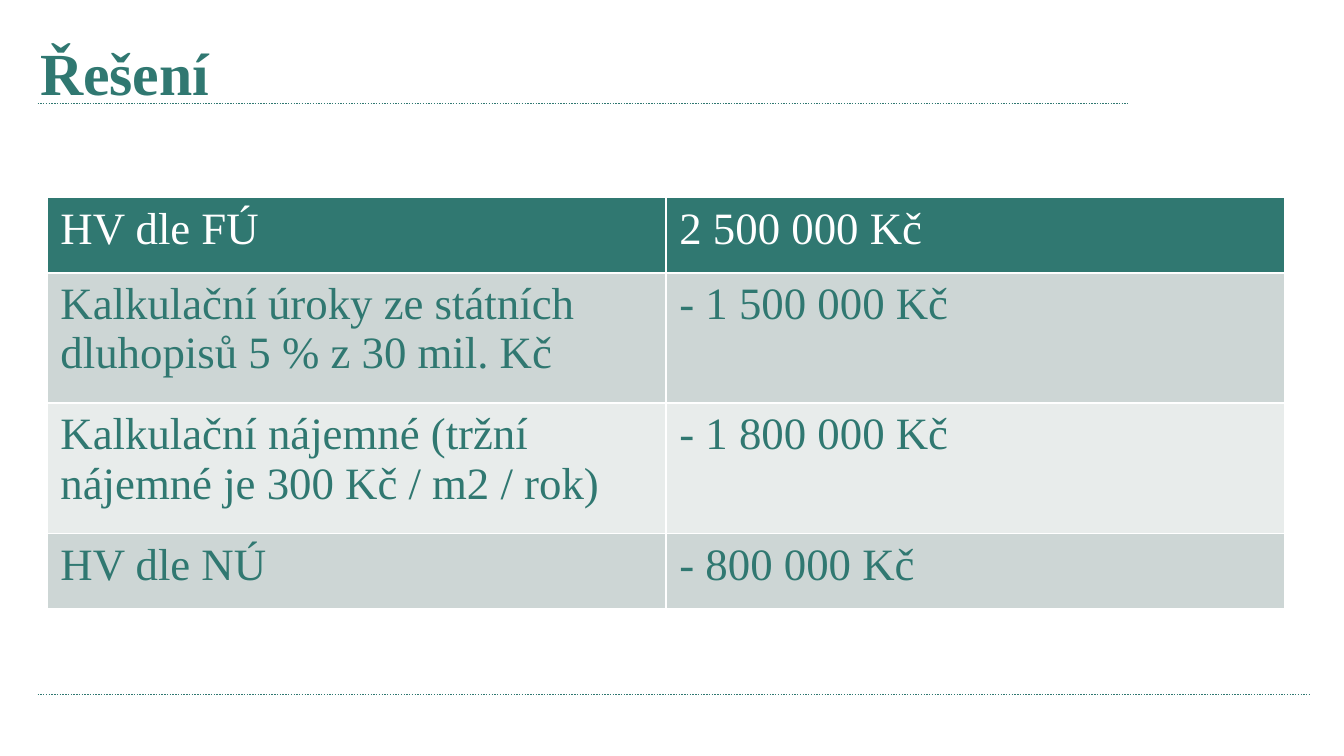
from lxml import etree
from pptx import Presentation
from pptx.dml.color import RGBColor
from pptx.enum.dml import MSO_LINE
from pptx.enum.shapes import MSO_CONNECTOR
from pptx.enum.text import MSO_ANCHOR
from pptx.oxml.ns import qn
from pptx.util import Inches, Pt

STRAIGHT, DOTTED, TOP = MSO_CONNECTOR.STRAIGHT, MSO_LINE.ROUND_DOT, MSO_ANCHOR.TOP
TEAL, WHITE, BAND_DARK, BAND_LIGHT = "307871", "FFFFFF", "CDD6D5", "E8ECEB"
FONT = "Times New Roman"

# Content
TITLE = "Řešení"
ROWS = [
    ("HV dle FÚ", "2 500 000 Kč"),
    ("Kalkulační úroky ze státních dluhopisů 5 % z 30 mil. Kč", "- 1 500 000 Kč"),
    ("Kalkulační nájemné (tržní nájemné je 300 Kč / m2 / rok)", "- 1 800 000 Kč"),
    ("HV dle NÚ", "- 800 000 Kč"),
]
ROW_HEIGHTS = [0.56, 0.97, 0.97, 0.56]
TABLE_WIDTH = 9.21
RULES = [(0.77, 8.39), (5.17, 9.75)]  # y, right end


def rgb(value):
    return RGBColor.from_string(value)


def write(tf, text, size, color, bold=False):
    r = tf.paragraphs[0].add_run()
    r.text = text
    for name, value in {"name": FONT, "size": Pt(size), "bold": bold}.items():
        setattr(r.font, name, value)
    r.font.color.rgb = rgb(color)


def add_borders(cell, color, width):
    tc_pr = cell._tc.get_or_add_tcPr()
    for i, side in enumerate(("lnL", "lnR", "lnT", "lnB")):
        ln = etree.Element(qn(f"a:{side}"), w=str(Pt(width)))
        fill = etree.SubElement(ln, qn("a:solidFill"))
        etree.SubElement(fill, qn("a:srgbClr"), val=color)
        tc_pr.insert(i, ln)  # borders come before the cell fill


# Slide in 16:9
prs = Presentation()
prs.slide_width, prs.slide_height = Inches(10), Inches(10 * 9 / 16)
s = prs.slides.add_slide(prs.slide_layouts[6])

# Dotted rules
for y, right in RULES:
    rule = s.shapes.add_connector(STRAIGHT, Inches(0.28), Inches(y), Inches(right), Inches(y))
    rule.line.color.rgb = rgb(TEAL)
    rule.line.width = Pt(0.75)
    rule.line.dash_style = DOTTED
    etree.SubElement(rule._element.spPr, qn("a:effectLst"))

# Title
tf = s.shapes.add_textbox(Inches(0.2), Inches(0.21), Inches(8.03), Inches(0.47)).text_frame
title_format = {"word_wrap": True, "vertical_anchor": TOP,
                "margin_top": Inches(0.06), "margin_bottom": 0}
for name, value in title_format.items():
    setattr(tf, name, value)
write(tf, TITLE, 32, TEAL, bold=True)

# Table: teal header, then alternating bands
table = s.shapes.add_table(len(ROWS), 2, Inches(0.35), Inches(1.47),
                           Inches(TABLE_WIDTH), Inches(sum(ROW_HEIGHTS))).table
for i, (texts, height) in enumerate(zip(ROWS, ROW_HEIGHTS)):
    table.rows[i].height = Inches(height)
    band = BAND_DARK if i % 2 else BAND_LIGHT
    fill, color = (band, TEAL) if i else (TEAL, WHITE)
    for j, text in enumerate(texts):
        cell = table.cell(i, j)
        cell.fill.solid()
        cell.fill.fore_color.rgb = rgb(fill)
        add_borders(cell, WHITE, 1)
        write(cell.text_frame, text, 24, color)

prs.save("out.pptx")
